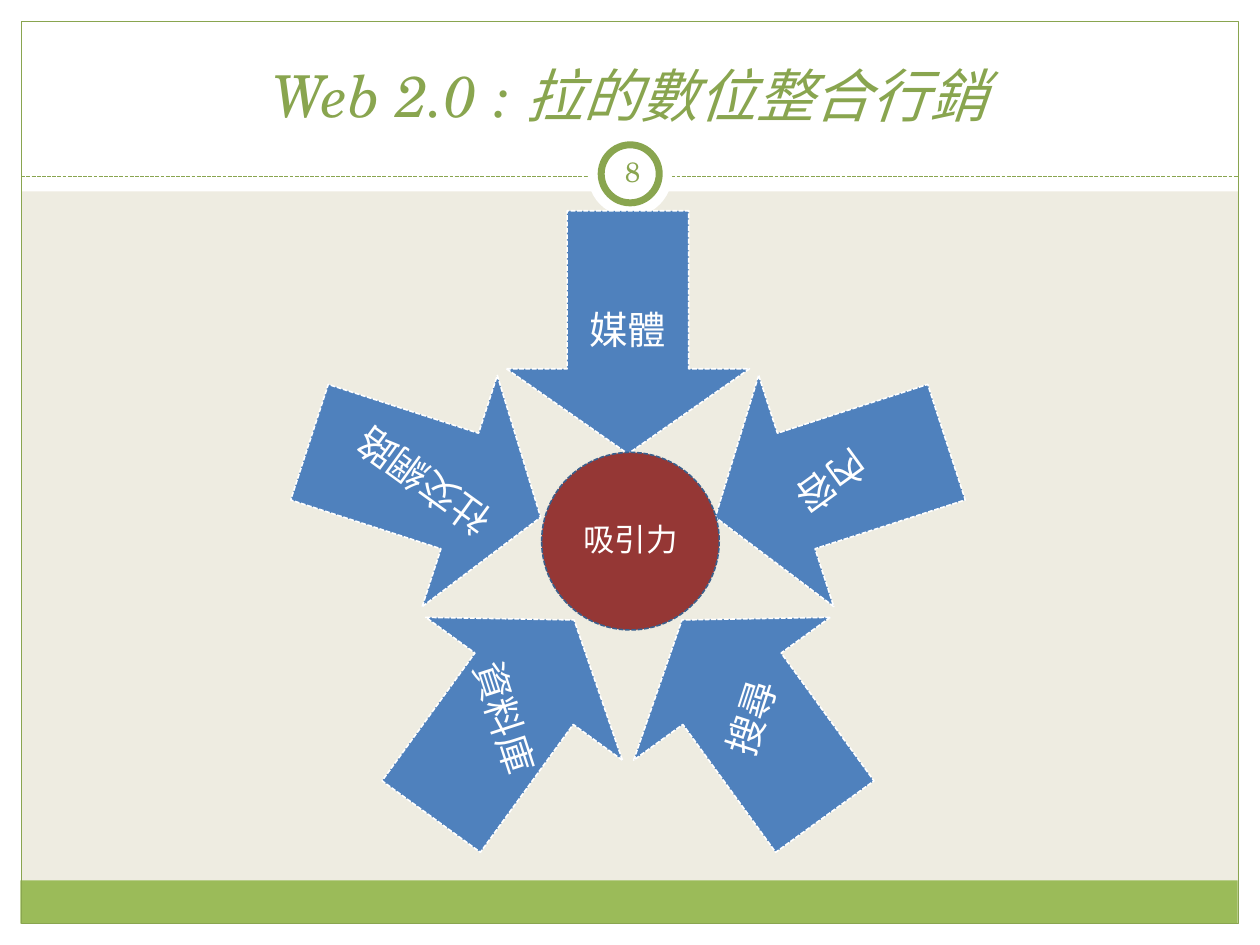
import math
import pptx
import pptx.util
import pptx.dml.color
import pptx.enum.dml
import pptx.enum.shapes
import pptx.enum.text
import pptx.oxml.ns
import lxml.etree

Cm, Pt = pptx.util.Cm, pptx.util.Pt
rgb = pptx.dml.color.RGBColor.from_string
Kind = pptx.enum.shapes.MSO_SHAPE
Anchor = pptx.enum.text.MSO_ANCHOR
Dash = pptx.enum.dml.MSO_LINE.SQUARE_DOT

FONT = "TeX Gyre Schola"
GREEN, BLUE, RED, WHITE = "89A54F", "4F81BD", "953735", "FFFFFF"

deck = pptx.Presentation()
deck.slide_width, deck.slide_height = Cm(25.4), Cm(19.05)
slide = deck.slides.add_slide(deck.slide_layouts[5])
slide.background.fill.solid()
slide.background.fill.fore_color.rgb = rgb("EEECE1")
shapes = slide.shapes


def draw(kind, box, fill=None, line=None, width=0.75, dash=None):
    shape = shapes.add_shape(kind, *[Cm(n) for n in box])
    shape.shadow.inherit = False
    if fill:
        shape.fill.solid()
        shape.fill.fore_color.rgb = rgb(fill)
    else:
        shape.fill.background()
    if line:
        shape.line.color.rgb = rgb(line)
        shape.line.width = Pt(width)
        shape.line.dash_style = dash
    else:
        shape.line.fill.background()
    return shape


def write(shape, text, size, color, inset, space=1.0, anchor=Anchor.MIDDLE):
    frame = shape.text_frame
    frame.word_wrap = True
    frame.auto_size = pptx.enum.text.MSO_AUTO_SIZE.NONE
    frame.vertical_anchor = anchor
    frame.margin_left = frame.margin_right = Cm(inset)
    frame.margin_top = frame.margin_bottom = Cm(inset)
    para = frame.paragraphs[0]
    para.alignment = pptx.enum.text.PP_ALIGN.CENTER
    para.line_spacing = space
    run = para.add_run()
    run.text = text
    run.font.name, run.font.size = FONT, Pt(size)
    run.font.color.rgb = rgb(color)
    return run


# White margins, green foot band and frame
for box, fill in [
    ((0, 18.62, 25.4, 0.43), WHITE),
    ((0, 0, 25.4, 3.86), WHITE),
    ((0, 0, 0.43, 19.05), WHITE),
    ((24.97, 0, 0.43, 19.05), WHITE),
    ((0.41, 17.75, 24.54, 0.87), "9BBB59"),
]:
    draw(Kind.RECTANGLE, box, fill)
draw(Kind.RECTANGLE, (0.43, 0.43, 24.54, 18.19), line=GREEN)

# Dashed rule under the title
rule = shapes.add_connector(pptx.enum.shapes.MSO_CONNECTOR.STRAIGHT,
                            Cm(0.43), Cm(3.56), Cm(24.97), Cm(3.56))
rule.line.color.rgb = rgb(GREEN)
rule.line.width = Pt(0.75)
rule.line.dash_style = Dash
lxml.etree.SubElement(rule._element.spPr, pptx.oxml.ns.qn("a:effectLst"))

# Page number badge
draw(Kind.OVAL, (11.85, 2.67, 1.7, 1.7), WHITE)
draw(Kind.OVAL, (12.12, 2.92, 1.17, 1.17), WHITE, GREEN, 4)
page = shapes.add_textbox(Cm(12.12), Cm(2.84), Cm(1.27), Cm(1.22))
write(page, "8", 16, GREEN, 0.13)

# Title, brought in front of the white band
title = shapes.title
title.left, title.top, title.width, title.height = Cm(0.85), Cm(0.64), Cm(23.7), Cm(2.1)
write(title, "Web 2.0 : 拉的數位整合行銷", 33, GREEN, 0.13,
      anchor=Anchor.BOTTOM).font.italic = True
shapes._spTree.append(title._element)

# Ring of arrows pointing inward, each label turned twice as far
MID_X, MID_Y, RADIUS, SIZE = 12.66, 11, 4.3, 4.9
labels = ["媒體", "內容", "搜尋", "資料庫", "社交網路"]
for i, label in enumerate(labels):
    turn = i * 360 / len(labels)
    left = MID_X + RADIUS * math.sin(math.radians(turn)) - SIZE / 2
    top = MID_Y - RADIUS * math.cos(math.radians(turn)) - SIZE / 2
    arrow = draw(Kind.DOWN_ARROW, (left, top, SIZE, SIZE), BLUE, WHITE, 0.9, Dash)
    arrow.adjustments[0], arrow.adjustments[1] = 0.5, 0.35
    arrow.rotation = turn
    note = shapes.add_textbox(Cm(left), Cm(top), Cm(SIZE), Cm(SIZE))
    note.rotation = 2 * turn % 360
    write(note, label, 22, WHITE, 0.43, 0.9)

# Centre
core = draw(Kind.OVAL, (10.92, 9.12, 3.58, 3.58), RED, "3A5F8C", 0.9, Dash)
write(core, "吸引力", 18, WHITE, 0.13, 0.9)

deck.save("out.pptx")
